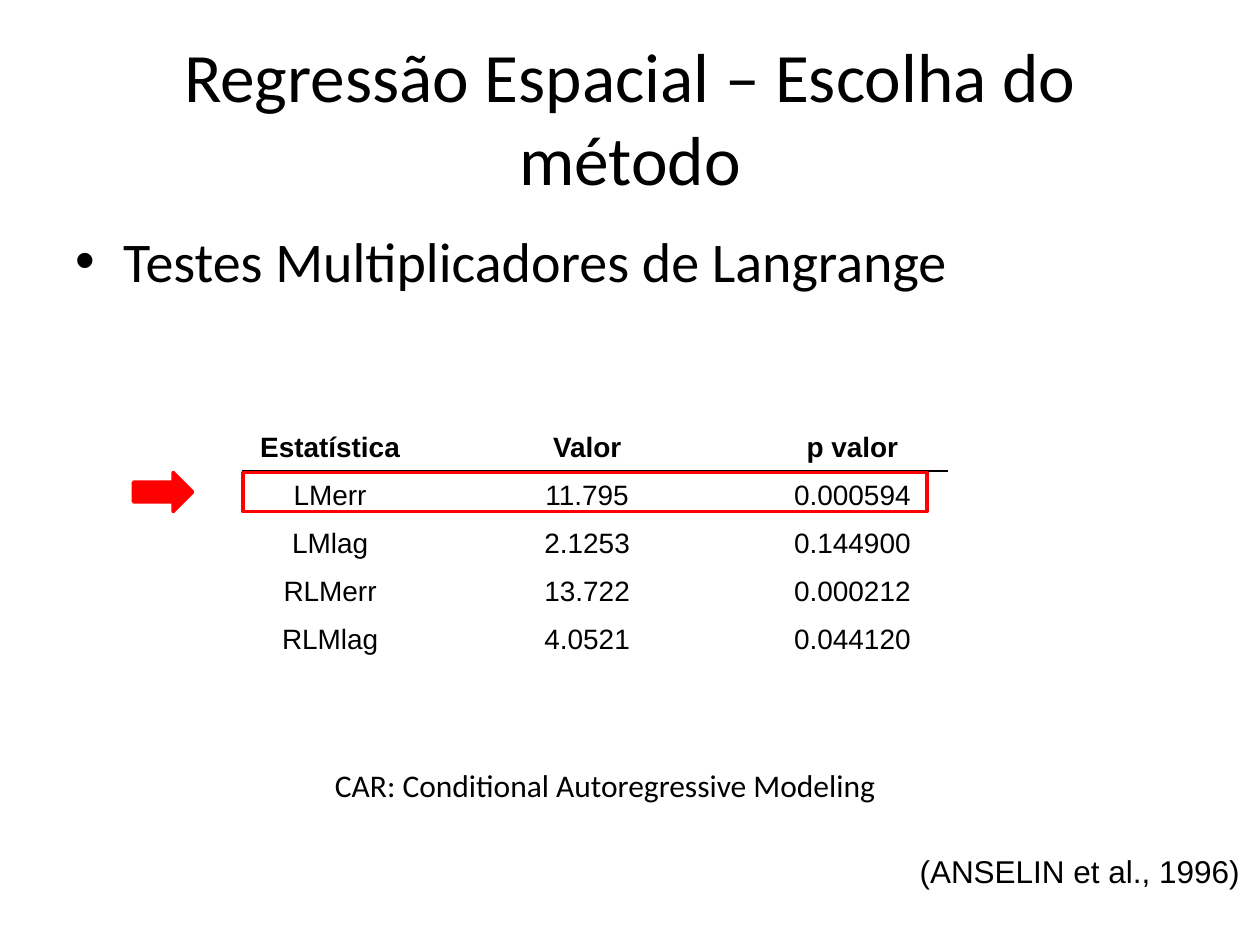
import pptx
import pptx.util
import pptx.dml.color
import pptx.enum.shapes
import pptx.enum.text
import pptx.oxml
import pptx.oxml.ns

Inches = pptx.util.Inches
Pt = pptx.util.Pt
MSO_SHAPE = pptx.enum.shapes.MSO_SHAPE
ANCHOR = pptx.enum.text.MSO_ANCHOR
ALIGN = pptx.enum.text.PP_ALIGN
AUTO_SIZE = pptx.enum.text.MSO_AUTO_SIZE

WIDTH, HEIGHT = 10, 7.5
MARGIN = 0.05 * WIDTH
COLORS = {"text": "000000", "mark": "FF0000"}
TABLE_LEFT, TABLE_TOP, ROW_HEIGHT = 1.93, 3.36, 0.38
COLUMN_WIDTHS = (1.38, 2.7, 1.51)
MARK_TOP, MARK_HEIGHT = TABLE_TOP + ROW_HEIGHT + 0.01, 0.31
ROWS = (
    ("Estatística", "Valor", "p valor"),
    ("LMerr", "11.795", "0.000594"),
    ("LMlag", "2.1253", "0.144900"),
    ("RLMerr", "13.722", "0.000212"),
    ("RLMlag", "4.0521", "0.044120"),
)


def rgb(name):
    return pptx.dml.color.RGBColor.from_string(COLORS[name])


def box(left, top, width, height):
    return [Inches(v) for v in (left, top, width, height)]


def add_run(p, text, size, font, bold=False):
    r = p.add_run()
    r.text = text
    r.font.size = Pt(size)
    r.font.name = font
    r.font.bold = bold
    r.font.color.rgb = rgb("text")


def set_title(s, text):
    sp = s.shapes.title
    sp.left, sp.top, sp.width, sp.height = box(
        MARGIN, 0.04 * HEIGHT, WIDTH - 2 * MARGIN, HEIGHT / 6)
    tf = sp.text_frame
    tf.auto_size = AUTO_SIZE.NONE
    tf.vertical_anchor = ANCHOR.MIDDLE
    p = tf.paragraphs[0]
    p.alignment = ALIGN.CENTER
    add_run(p, text, 39.6, "Calibri")


def add_text(s, place, text, size, font, wrap=True, grow=True):
    tf = s.shapes.add_textbox(*box(*place)).text_frame
    tf.word_wrap = wrap
    tf.auto_size = AUTO_SIZE.SHAPE_TO_FIT_TEXT if grow else AUTO_SIZE.NONE
    p = tf.paragraphs[0]
    add_run(p, text, size, font)
    return p


def add_bullet(p, indent):
    pPr = p._p.get_or_add_pPr()
    pPr.set("marL", str(Inches(indent)))
    pPr.set("indent", str(-Inches(indent)))
    for tag, key, value in (("buFont", "typeface", "Arial"), ("buChar", "char", "•")):
        pPr.append(pptx.oxml.parse_xml(
            f'<a:{tag} {pptx.oxml.ns.nsdecls("a")} {key}="{value}"/>'))


def set_border(cell, side):
    cell._tc.get_or_add_tcPr().insert(0, pptx.oxml.parse_xml(
        f'<a:{side} {pptx.oxml.ns.nsdecls("a")} w="{Pt(1)}"><a:solidFill>'
        f'<a:srgbClr val="{COLORS["text"]}"/></a:solidFill></a:{side}>'))


def fill_cell(cell, text, row):
    cell.margin_left = cell.margin_right = cell.margin_top = Inches(0.01)
    cell.margin_bottom = 0
    cell.vertical_anchor = ANCHOR.MIDDLE
    cell.fill.background()
    p = cell.text_frame.paragraphs[0]
    p.alignment = ALIGN.CENTER
    add_run(p, text, 16, "Arial", bold=row == 0)
    if row < 2:
        set_border(cell, ("lnB", "lnT")[row])


def add_statistics(s):
    table = s.shapes.add_table(len(ROWS), len(COLUMN_WIDTHS), *box(
        TABLE_LEFT, TABLE_TOP, sum(COLUMN_WIDTHS), ROW_HEIGHT * len(ROWS))).table
    table.first_row = table.horz_banding = False
    for column, width in zip(table.columns, COLUMN_WIDTHS):
        column.width = Inches(width)
    for i, values in enumerate(ROWS):
        for j, text in enumerate(values):
            fill_cell(table.cell(i, j), text, i)


def add_mark(s, kind, left, width, filled):
    sp = s.shapes.add_shape(kind, *box(left, MARK_TOP, width, MARK_HEIGHT))
    sp.shadow.inherit = False
    if filled:
        sp.fill.solid()
        sp.fill.fore_color.rgb = rgb("mark")
    else:
        sp.fill.background()
    sp.line.color.rgb = rgb("mark")
    sp.line.width = Pt(2)


def main():
    prs = pptx.Presentation()
    prs.slide_width, prs.slide_height = Inches(WIDTH), Inches(HEIGHT)
    s = prs.slides.add_slide(prs.slide_layouts[5])
    set_title(s, "Regressão Espacial – Escolha do método")
    p = add_text(s, (MARGIN, 1.75, WIDTH - 2 * MARGIN, 0.66 * HEIGHT),
                 "Testes Multiplicadores de Langrange", 32, "Calibri", grow=False)
    add_bullet(p, 0.38)
    add_statistics(s)
    add_mark(s, MSO_SHAPE.RIGHT_ARROW, 1.06, 0.47, True)
    add_mark(s, MSO_SHAPE.RECTANGLE, TABLE_LEFT, 5.43, False)
    add_text(s, (2.56, 6.03, 4.72, 0.4),
             "CAR: Conditional Autoregressive Modeling", 18, "Calibri")
    add_text(s, (7.2, 6.71, 2.77, 0.4),
             "(ANSELIN et al., 1996)", 18, "Arial", wrap=False)
    prs.save("out.pptx")


if __name__ == "__main__":
    main()
